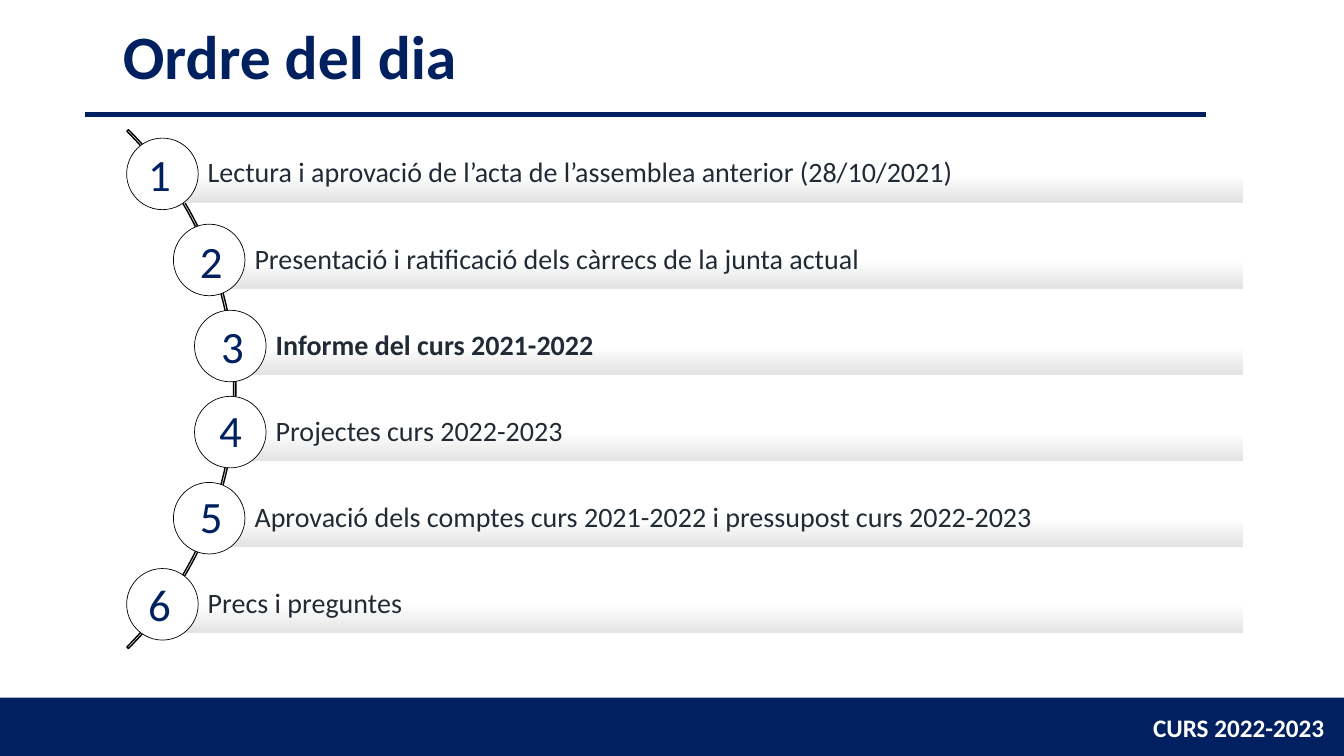
from copy import deepcopy
from math import sqrt

from pptx import Presentation
from pptx.dml.color import RGBColor
from pptx.enum.shapes import MSO_CONNECTOR as Connector, MSO_SHAPE as Shape
from pptx.enum.text import MSO_ANCHOR as Anchor, PP_ALIGN as Align
from pptx.oxml.ns import qn
from pptx.oxml.xmlchemy import OxmlElement
from pptx.util import Inches, Pt

COLORS = {
    "navy": "002060",
    "white": "FFFFFF",
    "black": "000000",
    "ink": "222A35",
    "shade": "E3E3E3",
}
COLUMNS, ROWS = 133.33, 75

# Text, bold, then the place of the numeral relative to the circle centre
AGENDA = [
    ("Lectura i aprovació de l’acta de l’assemblea anterior (28/10/2021)", False, -2.4, -3.2),
    ("Presentació i ratificació dels càrrecs de la junta actual", False, -1.9, -3.1),
    ("Informe del curs 2021-2022", True, -1.9, -3.2),
    ("Projectes curs 2022-2023", False, -2.1, -3.4),
    ("Aprovació dels comptes curs 2021-2022 i pressupost curs 2022-2023", False, -1.9, -3.4),
    ("Precs i preguntes", False, -2.4, -3.2),
]
ARC_X, ARC_Y, ARC_SIZE = -13, 38.6, 72.8
ORBIT = 36.1
STEP = 8.54
CIRCLE, BAR_HEIGHT, BAR_RIGHT = 7.1, 5.7, 123.3


def rgb(name):
    return RGBColor.from_string(COLORS[name])


class AgendaSlide:
    def __init__(self, presentation, font="Calibri"):
        self.font = font
        self.column = presentation.slide_width / COLUMNS
        self.row = presentation.slide_height / ROWS
        self.slide = presentation.slides.add_slide(presentation.slide_layouts[6])

    def place(self, left, top, width, height):
        """Turn columns and rows into slide lengths."""
        return (round(left * self.column), round(top * self.row),
                round(width * self.column), round(height * self.row))

    def shape(self, kind, box, fill=None, line=None, weight=1):
        shape = self.slide.shapes.add_shape(kind, *self.place(*box))
        shape.shadow.inherit = False
        if fill:
            shape.fill.solid()
            shape.fill.fore_color.rgb = rgb(fill)
        else:
            shape.fill.background()
        if line:
            shape.line.color.rgb = rgb(line)
            shape.line.width = Pt(weight)
        else:
            shape.line.fill.background()
        return shape

    def add_words(self, frame, text, size, color, bold=False):
        frame.word_wrap = True
        paragraph = frame.paragraphs[0]
        paragraph.alignment = Align.LEFT
        run = paragraph.add_run()
        run.text = text
        run.font.name = self.font
        run.font.size = Pt(size)
        run.font.bold = bold
        run.font.color.rgb = rgb(color)
        return paragraph

    def text(self, box, text, size, color, bold=False):
        shape = self.slide.shapes.add_textbox(*self.place(*box))
        self.add_words(shape.text_frame, text, size, color, bold)

    def rule(self, left, right, top, color, weight):
        x, y, width, _ = self.place(left, top, right - left, 0)
        line = self.slide.shapes.add_connector(Connector.STRAIGHT, x, y, x + width, y)
        line.line.color.rgb = rgb(color)
        line.line.width = Pt(weight)
        line.element.spPr.append(OxmlElement("a:effectLst"))

    def arc(self, center_x, center_y, size):
        box = (center_x - size / 2, center_y - size / 2, size, size)
        arc = self.shape(Shape.BLOCK_ARC, box, line="black")
        for index, value in enumerate((189, 27, 0.003)):
            arc.adjustments[index] = value

    def bar(self, box, text, bold):
        bar = self.shape(Shape.RECTANGLE, box)
        bar.fill.gradient()
        bar.fill.gradient_angle = 270
        stops = bar.element.spPr.find(".//" + qn("a:gsLst"))
        stops.insert(0, deepcopy(stops[0]))
        shades = ((0, "white"), (0.5, "white"), (1, "shade"))
        for stop, (position, color) in zip(bar.fill.gradient_stops, shades):
            stop.position = position
            stop.color.rgb = rgb(color)
        frame = bar.text_frame
        frame.vertical_anchor = Anchor.MIDDLE
        frame.margin_left = Inches(0.45)
        frame.margin_top = frame.margin_right = frame.margin_bottom = Inches(0.06)
        paragraph = self.add_words(frame, text, 20, "ink", bold)
        paragraph.line_spacing = 0.9

    def item(self, number, text, bold, numeral_x, numeral_y):
        """Draw one agenda entry, its circle centred on the orbit."""
        offset = (number - (len(AGENDA) + 1) / 2) * STEP
        x, y = ARC_X + sqrt(ORBIT ** 2 - offset ** 2), ARC_Y + offset
        self.bar((x, y - BAR_HEIGHT / 2, BAR_RIGHT - x, BAR_HEIGHT), text, bold)
        self.shape(Shape.OVAL, (x - CIRCLE / 2, y - CIRCLE / 2, CIRCLE, CIRCLE),
                   "white", "black", 0.5)
        self.text((x + numeral_x, y + numeral_y, 3.8, 6.4), str(number), 32, "navy")


def main():
    presentation = Presentation()
    presentation.slide_width = Inches(13.33)
    presentation.slide_height = Inches(7.5)
    agenda = AgendaSlide(presentation)
    agenda.shape(Shape.RECTANGLE, (0, 69.2, COLUMNS, 5.8), "navy")
    agenda.text((113.4, 70.2, 19.9, 4), "CURS 2022-2023", 18, "white", True)
    agenda.rule(8.4, 119.6, 11.4, "navy", 3.5)
    agenda.text((11.2, 1.3, 55.5, 8.4), "Ordre del dia", 44, "navy", True)
    agenda.arc(ARC_X, ARC_Y, ARC_SIZE)
    for number, entry in enumerate(AGENDA, 1):
        agenda.item(number, *entry)
    presentation.save("out.pptx")


if __name__ == "__main__":
    main()
